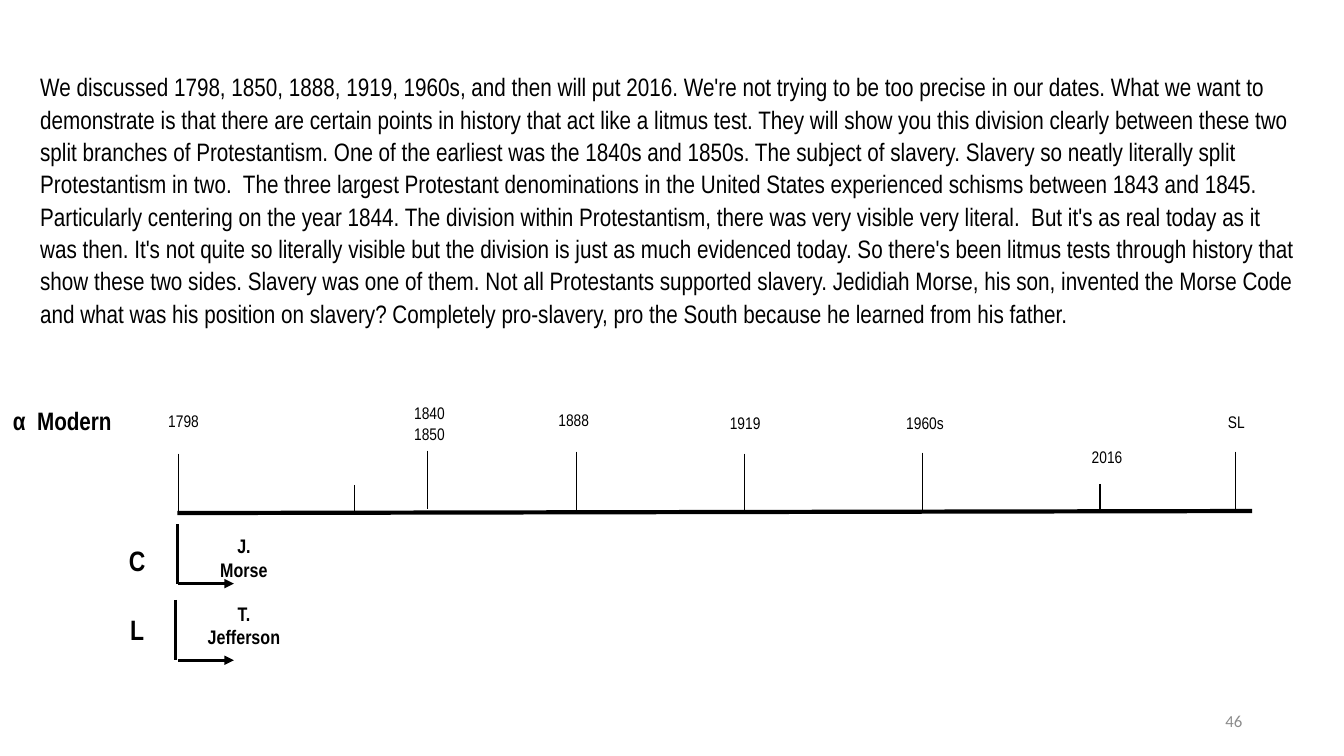
from pptx import Presentation
from pptx.dml.color import RGBColor
from pptx.enum.shapes import MSO_CONNECTOR
from pptx.enum.text import MSO_ANCHOR, MSO_AUTO_SIZE, PP_ALIGN
from pptx.util import Inches, Pt
from lxml import etree

BLACK = RGBColor(0, 0, 0)
GREY = RGBColor(0x8C, 0x8C, 0x8C)
LEFT, MID, RIGHT = PP_ALIGN.LEFT, PP_ALIGN.CENTER, PP_ALIGN.RIGHT
TOP, CENTER = MSO_ANCHOR.TOP, MSO_ANCHOR.MIDDLE
GROW, FIXED = MSO_AUTO_SIZE.SHAPE_TO_FIT_TEXT, MSO_AUTO_SIZE.NONE
STRAIGHT = MSO_CONNECTOR.STRAIGHT
NS = "{http://schemas.openxmlformats.org/drawingml/2006/main}"

BODY = [
    "We discussed 1798, 1850, 1888, 1919, 1960s, and then will put 2016.",
    "We're not trying to be too precise in our dates.",
    "What we want to demonstrate is that there are certain points in history that act like a litmus test.",
    "They will show you this division clearly between these two split branches of Protestantism.",
    "One of the earliest was the 1840s and 1850s.",
    "The subject of slavery.",
    "Slavery so neatly literally split Protestantism in two. ",
    "The three largest Protestant denominations in the United States experienced schisms between 1843 and 1845.",
    "Particularly centering on the year 1844.",
    "The division within Protestantism, there was very visible very literal. ",
    "But it's as real today as it was then.",
    "It's not quite so literally visible but the division is just as much evidenced today.",
    "So there's been litmus tests through history that show these two sides.",
    "Slavery was one of them.",
    "Not all Protestants supported slavery.",
    "Jedidiah Morse, his son, invented the Morse Code and what was his position on slavery?",
    "Completely pro-slavery, pro the South because he learned from his father.",
]
AXIS = (1.76, 5.09, 12.42, 5.07)
TALL, SHORT = 0.58, 0.26
TICKS = [
    (1.77, 4.5, TALL), (3.52, 4.81, SHORT), (4.24, 4.47, TALL),
    (5.72, 4.48, TALL), (7.38, 4.5, TALL), (9.15, 4.49, TALL),
    (10.91, 4.8, SHORT), (12.25, 4.48, TALL),
]
DATES = [
    (["1798"], 1.57, 4.03, 0.75), (["1840", "1850"], 4.01, 3.95, 0.56),
    (["1888"], 5.44, 4.02, 0.56), (["1919"], 7.14, 4.05, 0.56),
    (["1960s"], 8.89, 4.05, 0.66), (["2016"], 10.73, 4.38, 0.56),
    (["SL"], 12.08, 4.04, 0.56),
]
BRANCHES = [
    ("C", 5.34, ["J.", "Morse"], 5.25, 1.76, 5.2, 5.79),
    ("L", 6.03, ["T.", "Jefferson"], 5.92, 1.74, 5.95, 6.55),
]

deck = Presentation()
deck.slide_width, deck.slide_height = Inches(13.33), Inches(7.5)
slide = deck.slides.add_slide(deck.slide_layouts[6])


def write(lines, x, y, w, h, size, align=LEFT, bold=False, name="Arial Narrow",
          color=BLACK, anchor=TOP, fit=GROW, space=None):
    box = slide.shapes.add_textbox(*map(Inches, (x, y, w, h)))
    frame = box.text_frame
    look = {"word_wrap": True, "auto_size": fit, "vertical_anchor": anchor}
    for key, value in look.items():
        setattr(frame, key, value)
    frame.text = "\n".join(lines)
    for para in frame.paragraphs:
        para.alignment, para.line_spacing = align, space
        font = para.runs[0].font
        for key, value in {"name": name, "size": Pt(size), "bold": bold}.items():
            setattr(font, key, value)
        font.color.rgb = color


def draw(x1, y1, x2, y2, width, arrow=False):
    line = slide.shapes.add_connector(STRAIGHT, *map(Inches, (x1, y1, x2, y2)))
    line.line.width = Pt(width)
    line.line.color.rgb = BLACK
    props = line._element.spPr
    if arrow:
        etree.SubElement(props.find(NS + "ln"), NS + "tailEnd", type="triangle")
    etree.SubElement(props, NS + "effectLst")


write(["46"], 9.42, 6.95, 3, 0.4, 12, RIGHT, name="Calibri", color=GREY,
      anchor=CENTER, fit=FIXED)
write([" ".join(BODY)], 0.3, 0.64, 12.72, 2.68, 18, space=1.07)
write(["α  Modern"], 0.03, 3.97, 1.43, 0.4, 18, bold=True)

draw(*AXIS, 3)
for x, y, high in TICKS:
    draw(x, y, x, y + high, 0.75)
for lines, x, y, wide in DATES:
    write(lines, x, y, wide, 0.1 + 0.2 * len(lines), 12)

for mark, row, person, y, x, top, base in BRANCHES:
    draw(x, top, x, base, 2.25)
    draw(1.77, base, 2.32, base, 2.25, arrow=True)
    write([mark], 1, row, 0.72, 0.44, 20, MID, True)
    write(person, 1.95, y, 0.94, 0.57, 14, MID, True)

deck.save("out.pptx")
